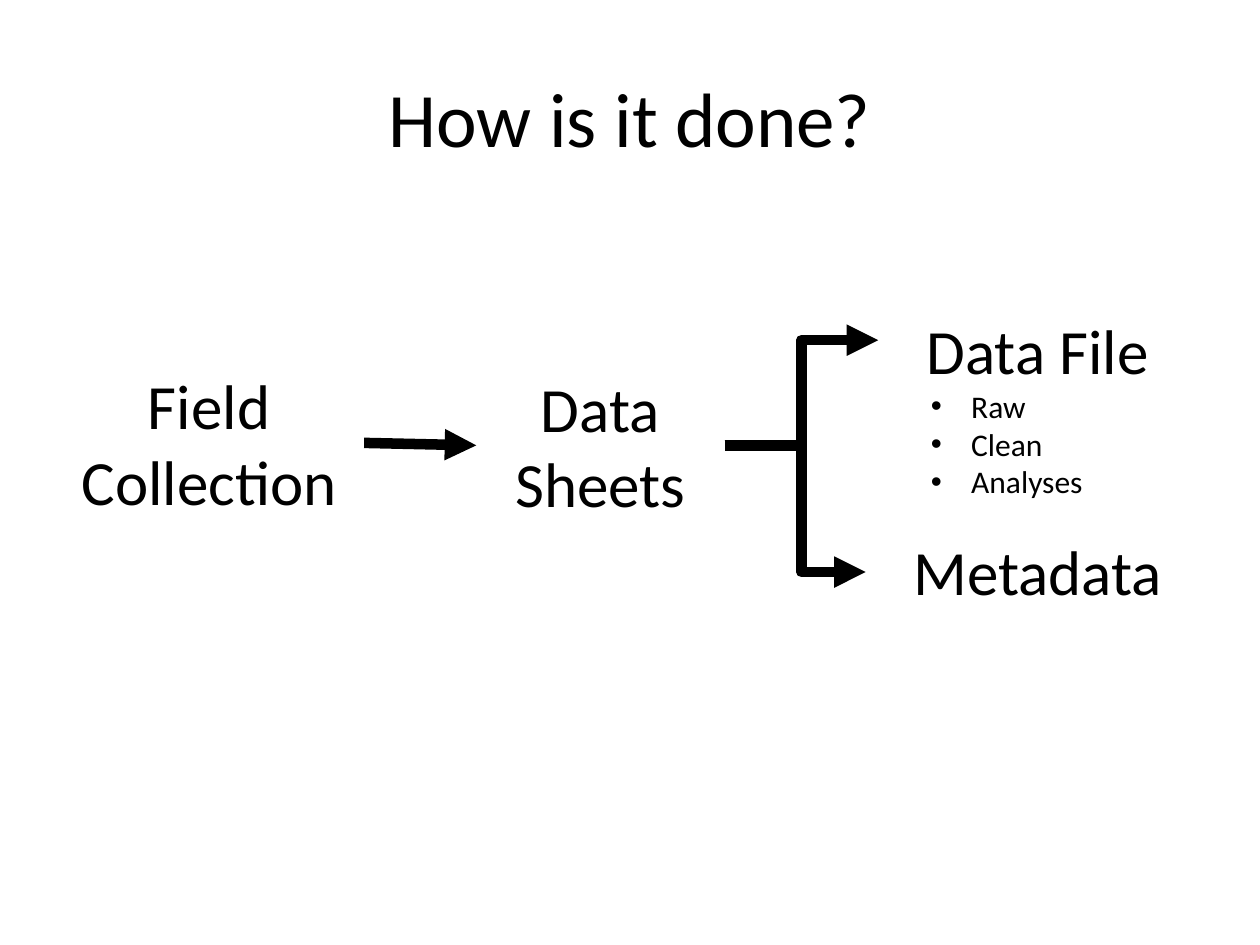
from pptx import Presentation
from pptx.dml.color import RGBColor
from pptx.enum.shapes import MSO_CONNECTOR as CONN
from pptx.enum.text import MSO_ANCHOR, MSO_AUTO_SIZE, PP_ALIGN
from pptx.oxml.ns import qn
from pptx.util import Inches, Pt
from lxml import etree

FONT = "Calibri"
BLACK = "000000"
RIGHT, LEFT = 3, 1  # connection sites of a rectangle


def rgb(color):
    return RGBColor.from_string(color)


def add_run(p, text, size):
    r = p.add_run()
    r.text = text
    r.font.name = FONT
    r.font.size = Pt(size)
    r.font.color.rgb = rgb(BLACK)


def add_bullet(p):
    pPr = p._p.get_or_add_pPr()
    pPr.set("marL", str(Inches(0.64)))
    pPr.set("indent", str(Inches(-0.32)))
    etree.SubElement(pPr, qn("a:buFont"), typeface="Arial")
    etree.SubElement(pPr, qn("a:buChar"), char="•")


def add_title(slide, box, text):
    sp = slide.shapes.title
    sp.left, sp.top, sp.width, sp.height = map(Inches, box)
    tf = sp.text_frame
    tf.vertical_anchor = MSO_ANCHOR.MIDDLE
    p = tf.paragraphs[0]
    p.alignment = PP_ALIGN.CENTER
    add_run(p, text, 44)


def add_step(slide, box, heading, items=(), wrap=True):
    """Centred heading with optional bullets below it."""
    sp = slide.shapes.add_textbox(*map(Inches, box))
    tf = sp.text_frame
    tf.word_wrap = wrap
    tf.auto_size = MSO_AUTO_SIZE.SHAPE_TO_FIT_TEXT
    p = tf.paragraphs[0]
    p.alignment = PP_ALIGN.CENTER
    add_run(p, heading, 36)
    for item in items:
        p = tf.add_paragraph()
        p.alignment = PP_ALIGN.LEFT
        add_bullet(p)
        add_run(p, item, 18)
    return sp


def add_arrow(slide, kind, source, end):
    """Thick arrow from the right side of source to the point end."""
    start = source.left + source.width, source.top + source.height // 2
    cxn = slide.shapes.add_connector(kind, *start, *end)
    cxn.begin_connect(source, RIGHT)
    cxn.line.color.rgb = rgb(BLACK)
    cxn.line.width = Pt(6)
    etree.SubElement(cxn.line._get_or_add_ln(), qn("a:tailEnd"), type="triangle")
    etree.SubElement(cxn._element.spPr, qn("a:effectLst"))
    return cxn


def add_branch(slide, source, end, spine_x):
    """Elbow arrow that turns at spine_x."""
    cxn = add_arrow(slide, CONN.ELBOW, source, end)
    share = (spine_x - cxn.begin_x) / (cxn.end_x - cxn.begin_x)
    geom = cxn._element.spPr.find(qn("a:prstGeom"))
    guides = geom.find(qn("a:avLst"))
    if guides is None:
        guides = etree.SubElement(geom, qn("a:avLst"))
    etree.SubElement(guides, qn("a:gd"), name="adj1",
                     fmla=f"val {round(share * 100000)}")


def add_workflow(slide, box):
    """Collection to sheets, which branch into data file and metadata."""
    x, y, w, h = box
    right = x + w

    # Steps
    field = add_step(slide, (x, y + 0.44, 2.46, 1.31), "Field Collection")
    sheets = add_step(slide, (x + 3.35, y + 0.46, 1.97, 1.31), "Data Sheets")
    add_step(slide, (right - 2.36, y + h - 0.71, 2.19, 0.71), "Metadata", wrap=False)
    add_step(slide, (right - 2.53, y, 2.53, 1.62), "Data File",
             ["Raw", "Clean", "Analyses"])

    # Branches share one vertical spine
    spine_x = Inches(x + 5.93)
    for end in ((right - 2.63, y + 2.12), (right - 2.53, y + 0.28)):
        add_branch(slide, sheets, tuple(map(Inches, end)), spine_x)

    # Collection to sheets
    end = sheets.left, sheets.top + sheets.height // 2
    add_arrow(slide, CONN.STRAIGHT, field, end).end_connect(sheets, LEFT)


def main():
    prs = Presentation()
    prs.slide_width, prs.slide_height = Inches(10), Inches(7.5)
    slide = prs.slides.add_slide(prs.slide_layouts[5])  # title only
    add_title(slide, (0.5, 0.3, 9, 1.25), "How is it done?")
    add_workflow(slide, (0.43, 2.42, 9.07, 2.47))
    prs.save("out.pptx")


if __name__ == "__main__":
    main()
